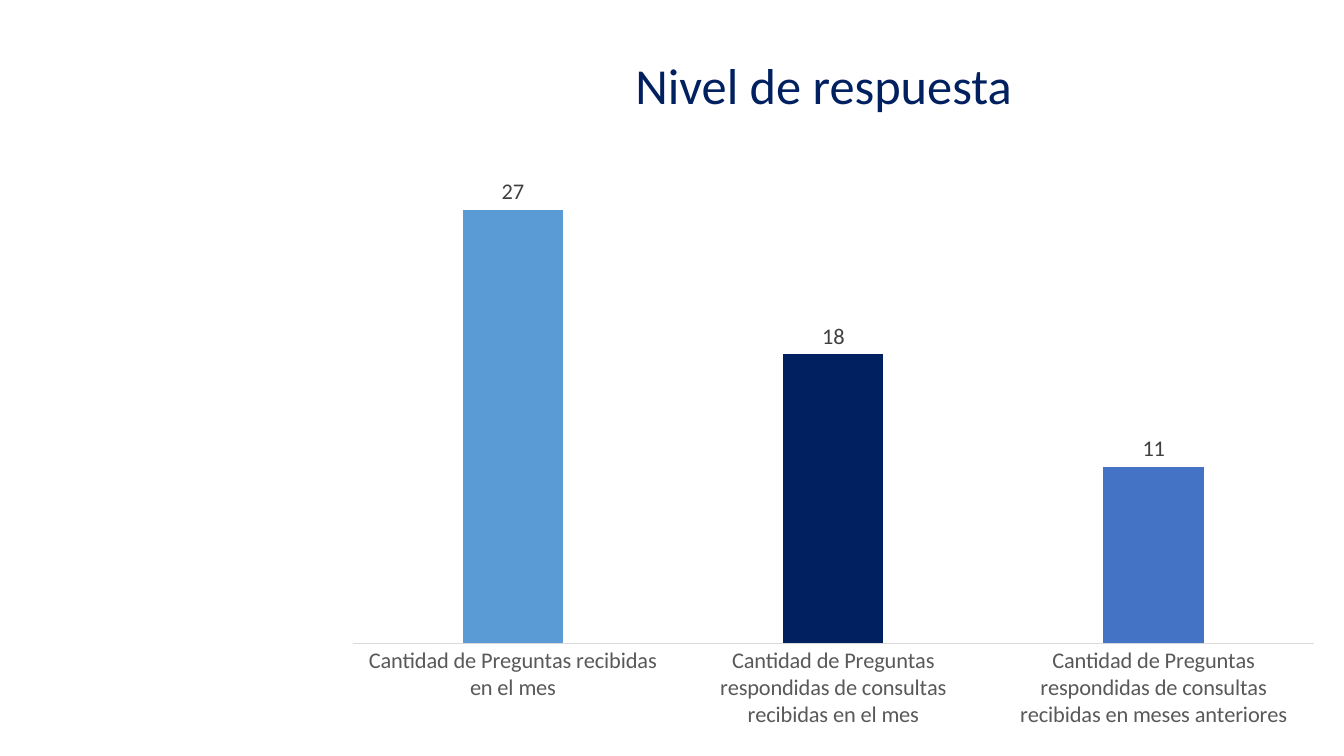
from pptx import Presentation
from pptx.chart.data import CategoryChartData
from pptx.dml.color import RGBColor
from pptx.enum.chart import XL_CHART_TYPE, XL_LABEL_POSITION, XL_TICK_LABEL_POSITION, XL_TICK_MARK
from pptx.enum.text import MSO_ANCHOR, PP_ALIGN
from pptx.util import Inches, Pt

COLUMNS = XL_CHART_TYPE.COLUMN_CLUSTERED
OUTSIDE_END = XL_LABEL_POSITION.OUTSIDE_END
NO_LABELS = XL_TICK_LABEL_POSITION.NONE
NO_TICKS = XL_TICK_MARK.NONE
MIDDLE = MSO_ANCHOR.MIDDLE
CENTER = PP_ALIGN.CENTER

FONT = "Calibri"
NAVY = "002060"
RESPONSES = [
    ("Cantidad de Preguntas recibidas en el mes", 27, "5B9BD5"),
    ("Cantidad de Preguntas respondidas de consultas recibidas en el mes", 18, NAVY),
    ("Cantidad de Preguntas respondidas de consultas recibidas en meses anteriores", 11, "4472C4"),
]


def color(hex_string):
    return RGBColor.from_string(hex_string)


def style_font(font, size, hex_string):
    font.name = FONT
    font.size = Pt(size)
    font.color.rgb = color(hex_string)


def add_title(slide, left, top, width, height):
    box = slide.shapes.add_textbox(Inches(left), Inches(top), Inches(width), Inches(height))
    text_frame = box.text_frame
    text_frame.word_wrap = True
    text_frame.vertical_anchor = MIDDLE
    text_frame.text = "Nivel de respuesta"
    paragraph = text_frame.paragraphs[0]
    paragraph.alignment = CENTER
    paragraph.line_spacing = 0.9
    style_font(paragraph.runs[0].font, 36, NAVY)


def add_response_chart(slide, left, top, width, height):
    data = CategoryChartData()
    data.categories = [category for category, _, _ in RESPONSES]
    data.add_series("Series 1", [value for _, value, _ in RESPONSES])
    chart = slide.shapes.add_chart(
        COLUMNS, Inches(left), Inches(top), Inches(width), Inches(height), data
    ).chart
    chart.has_title = False
    chart.has_legend = False
    style_font(chart.font, 16, "000000")

    # Columns, one color per category
    plot = chart.plots[0]
    plot.gap_width = 219
    plot.overlap = -27
    plot.vary_by_categories = False
    series = plot.series[0]
    series.format.fill.solid()
    series.format.fill.fore_color.rgb = color(NAVY)
    for index, (_, _, column_color) in enumerate(RESPONSES):
        fill = series.points[index].format.fill
        fill.solid()
        fill.fore_color.rgb = color(column_color)

    # Value labels
    labels = series.data_labels
    labels.show_value = True
    labels.position = OUTSIDE_END
    style_font(labels.font, 16, "404040")

    # Axes
    category_axis = chart.category_axis
    category_axis.major_tick_mark = NO_TICKS
    category_axis.minor_tick_mark = NO_TICKS
    category_axis.format.line.color.rgb = color("D9D9D9")
    category_axis.format.line.width = Pt(0.75)
    style_font(category_axis.tick_labels.font, 16, "595959")
    value_axis = chart.value_axis
    value_axis.minimum_scale = 0
    value_axis.maximum_scale = 30
    value_axis.has_major_gridlines = False
    value_axis.tick_label_position = NO_LABELS
    value_axis.visible = False


def main():
    presentation = Presentation()
    presentation.slide_width = Inches(13.33)
    presentation.slide_height = Inches(7.5)
    slide = presentation.slides.add_slide(presentation.slide_layouts[6])
    add_title(slide, 4.8, 0.26, 6.74, 1.23)
    add_response_chart(slide, 3.3, 1.49, 9.93, 5.86)
    presentation.save("out.pptx")


if __name__ == "__main__":
    main()
